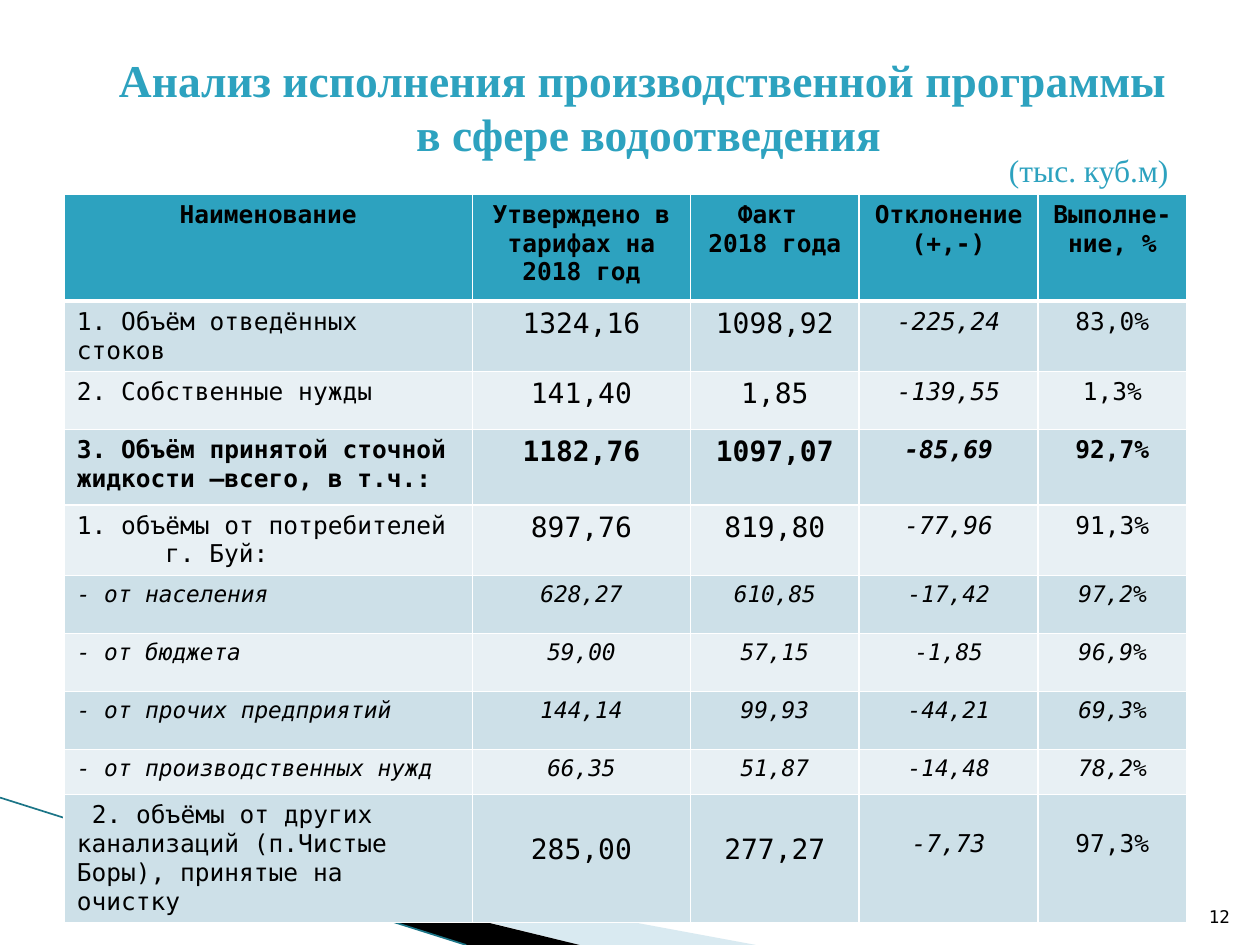
from dataclasses import dataclass

from lxml import etree
from pptx import Presentation
from pptx.dml.color import RGBColor
from pptx.enum.shapes import MSO_CONNECTOR
from pptx.enum.text import MSO_ANCHOR, PP_ALIGN
from pptx.oxml.ns import qn
from pptx.oxml.xmlchemy import OxmlElement
from pptx.util import Inches, Pt

SLIDE_WIDTH = Inches(10)
SLIDE_HEIGHT = Inches(7.5)
GRID_COLUMNS = 100
UNIT = SLIDE_WIDTH / GRID_COLUMNS

TEAL = RGBColor(0x2D, 0xA2, 0xBF)
DARK_TEAL = RGBColor(0x1B, 0x75, 0x87)
PALE_BLUE = RGBColor(0xA0, 0xCB, 0xDC)
BAND_DARK = RGBColor(0xCD, 0xE0, 0xE8)
BAND_LIGHT = RGBColor(0xE8, 0xF0, 0xF4)
BLACK = RGBColor(0, 0, 0)
WHITE = RGBColor(0xFF, 0xFF, 0xFF)

STRAIGHT = MSO_CONNECTOR.STRAIGHT
LEFT, CENTER, RIGHT = PP_ALIGN.LEFT, PP_ALIGN.CENTER, PP_ALIGN.RIGHT
TOP, MIDDLE, BOTTOM = MSO_ANCHOR.TOP, MSO_ANCHOR.MIDDLE, MSO_ANCHOR.BOTTOM

MONO = "DejaVu Sans Mono"
SERIF = "Times New Roman"


@dataclass(frozen=True)
class Style:
    size: int
    font: str = MONO
    color: RGBColor = BLACK
    bold: bool = False
    italic: bool = False
    align: PP_ALIGN = CENTER


@dataclass(frozen=True)
class Label:
    text: str
    box: tuple[float, float, float, float]
    style: Style
    anchor: MSO_ANCHOR = TOP


@dataclass(frozen=True)
class Row:
    height: float
    cells: tuple[str, ...]
    header: bool = False
    bold: bool = False
    detail: bool = False
    lowered: bool = False
    first_indent: float = 0
    second_margin: float = 0


LABELS = (
    Label("Анализ исполнения производственной программы \vв сфере водоотведения",
          (5, 3, 93, 10.9), Style(26, SERIF, TEAL, bold=True), MIDDLE),
    Label("12", (94.6, 70.1, 4, 4), Style(10, align=RIGHT), BOTTOM),
    Label("(тыс. куб.м)", (79.1, 11.5, 15.7, 4), Style(18, SERIF, TEAL, align=LEFT)),
)

TABLE_LEFT, TABLE_TOP = 5.1, 15.4
COLUMN_WIDTHS = (32.4, 17.3, 13.4, 14.2, 11.8)
ROWS = (
    Row(8.5, ("Наименование", "Утверждено в тарифах на 2018 год", "Факт \n2018 года",
              "Отклонение (+,-)", "Выполне-ние, %"), header=True, bold=True),
    Row(5.5, ("1. Объём отведённых стоков", "1324,16", "1098,92", "-225,24", "83,0%")),
    Row(4.6, ("2. Собственные нужды", "141,40", "1,85", "-139,55", "1,3%")),
    Row(6, ("3. Объём принятой сточной жидкости –всего, в т.ч.:",
            "1182,76", "1097,07", "-85,69", "92,7%"), bold=True),
    Row(5.6, ("1. объёмы от потребителей\nг. Буй:",
              "897,76", "819,80", "-77,96", "91,3%"), second_margin=7),
    Row(4.6, ("- от населения", "628,27", "610,85", "-17,42", "97,2%"), detail=True),
    Row(4.6, ("- от бюджета", "59,00", "57,15", "-1,85", "96,9%"), detail=True),
    Row(4.6, ("- от прочих предприятий", "144,14", "99,93", "-44,21", "69,3%"), detail=True),
    Row(3.6, ("- от производственных нужд", "66,35", "51,87", "-14,48", "78,2%"), detail=True),
    Row(10.1, ("2. объёмы от других канализаций (п.Чистые Боры), принятые на очистку",
               "285,00", "277,27", "-7,73", "97,3%"), lowered=True, first_indent=1.2),
)
SUMMARY_SIZES = (14, 16, 16, 14, 14)
DEVIATION_COLUMN = 3


def grid(value: float) -> int:
    return round(value * UNIT)


def write_text(text_frame, text: str, style: Style) -> None:
    text_frame.text = text
    for paragraph in text_frame.paragraphs:
        paragraph.alignment = style.align
        for run in paragraph.runs:
            font = run.font
            font.name, font.size = style.font, Pt(style.size)
            font.bold, font.italic = style.bold, style.italic
            font.color.rgb = style.color


def add_label(slide, label: Label) -> None:
    shape = slide.shapes.add_textbox(*map(grid, label.box))
    text_frame = shape.text_frame
    text_frame.word_wrap = True
    text_frame.vertical_anchor = label.anchor
    write_text(text_frame, label.text, label.style)


def add_wedge(slide, points: list[tuple[float, float]], color: RGBColor, opacity: int) -> None:
    builder = slide.shapes.build_freeform(*points[0], scale=UNIT)
    builder.add_line_segments(points[1:], close=True)
    shape = builder.convert_to_shape()
    shape.shadow.inherit = False
    shape.fill.solid()
    shape.fill.fore_color.rgb = color
    shape.line.fill.background()
    solid_color = shape.fill._xPr.find(qn("a:solidFill"))[0]
    etree.SubElement(solid_color, qn("a:alpha")).set("val", str(opacity * 1000))


def add_edge_line(slide) -> None:
    connector = slide.shapes.add_connector(STRAIGHT, 0, grid(63.3), grid(37), SLIDE_HEIGHT)
    connector.line.color.rgb = DARK_TEAL
    connector.line.width = Pt(0.95)
    etree.SubElement(connector._element.spPr, qn("a:effectLst"))


def set_borders(cell, top: int, bottom: int) -> None:
    properties = cell._tc.get_or_add_tcPr()
    widths = {"lnL": 1, "lnR": 1, "lnT": top, "lnB": bottom}
    for position, (side, width) in enumerate(widths.items()):
        border = OxmlElement(f"a:{side}")
        border.set("w", str(Pt(width)))
        fill = etree.SubElement(border, qn("a:solidFill"))
        etree.SubElement(fill, qn("a:srgbClr")).set("val", str(WHITE))
        properties.insert(position, border)


def cell_style(row: Row, column: int) -> Style:
    size = 14 if row.header else 13 if row.detail else SUMMARY_SIZES[column]
    italic = row.detail or (column == DEVIATION_COLUMN and not row.header)
    align = LEFT if column == 0 and not row.header else CENTER
    return Style(size, bold=row.bold, italic=italic, align=align)


def add_volume_table(slide) -> None:
    frame = slide.shapes.add_table(
        len(ROWS), len(COLUMN_WIDTHS), grid(TABLE_LEFT), grid(TABLE_TOP),
        grid(sum(COLUMN_WIDTHS)), grid(sum(row.height for row in ROWS)))
    table = frame.table
    for column, width in zip(table.columns, COLUMN_WIDTHS):
        column.width = grid(width)
    for index, row in enumerate(ROWS):
        table.rows[index].height = grid(row.height)
        band = BAND_DARK if index % 2 else BAND_LIGHT
        for column, text in enumerate(row.cells):
            cell = table.cell(index, column)
            style = cell_style(row, column)
            write_text(cell.text_frame, text, style)
            cell.fill.solid()
            cell.fill.fore_color.rgb = TEAL if row.header else band
            set_borders(cell, 3 if index == 1 else 1, 3 if row.header else 1)
            if row.lowered and column:
                cell.margin_top = Inches(0.05) + Pt(style.size * 1.16)
        paragraphs = table.cell(index, 0).text_frame.paragraphs
        if row.first_indent:
            paragraphs[0]._p.get_or_add_pPr().set("indent", str(grid(row.first_indent)))
        if row.second_margin:
            paragraphs[1]._p.get_or_add_pPr().set("marL", str(grid(row.second_margin)))


def main() -> None:
    presentation = Presentation()
    presentation.slide_width = SLIDE_WIDTH
    presentation.slide_height = SLIDE_HEIGHT
    slide = presentation.slides.add_slide(presentation.slide_layouts[6])
    add_wedge(slide, [(5.5, 65), (59.5, 75), (45.6, 75)], PALE_BLUE, 40)
    add_wedge(slide, [(5.3, 64.9), (45.5, 75), (37, 75)], BLACK, 100)
    add_edge_line(slide)
    add_volume_table(slide)
    for label in LABELS:
        add_label(slide, label)
    presentation.save("out.pptx")


if __name__ == "__main__":
    main()
